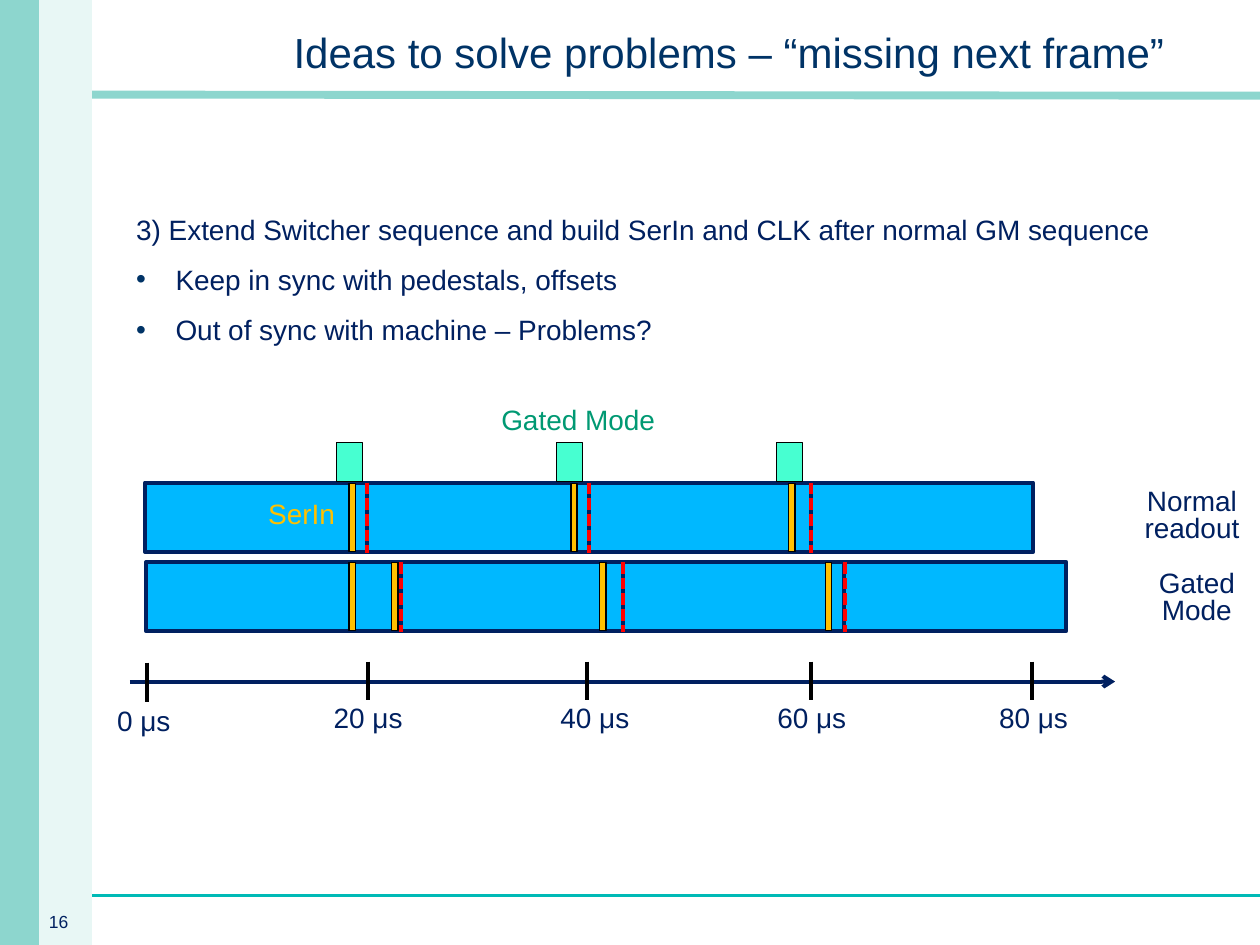
from lxml.etree import SubElement
from pptx import Presentation
from pptx.dml.color import RGBColor
from pptx.enum.dml import MSO_LINE_DASH_STYLE as Dash
from pptx.enum.shapes import MSO_CONNECTOR as Connector, MSO_SHAPE as Shape
from pptx.enum.text import MSO_ANCHOR as Anchor, MSO_AUTO_SIZE as AutoSize, PP_ALIGN as Align
from pptx.oxml.ns import qn
from pptx.util import Pt

NAVY = RGBColor(0x00, 0x20, 0x60)
TITLE_BLUE = RGBColor(0x00, 0x33, 0x66)
FRAME_BLUE = RGBColor(0x00, 0xB8, 0xFF)
TEAL = RGBColor(0x00, 0xBA, 0xB6)
SOFT_TEAL = RGBColor(0x8D, 0xD6, 0xCE)
PALE_TEAL = RGBColor(0xE8, 0xF7, 0xF5)
MINT = RGBColor(0x47, 0xFF, 0xD1)
GREEN = RGBColor(0x00, 0x99, 0x73)
AMBER = RGBColor(0xFF, 0xC0, 0x00)
RED = RGBColor(0xFF, 0x00, 0x00)
BLACK = RGBColor(0x00, 0x00, 0x00)

FRAME_HEIGHT = 39.6


def style_font(paragraph, size, color):
    for run in paragraph.runs:
        run.font.name = "Arial"
        run.font.size = Pt(size)
        run.font.color.rgb = color


def add_block(slide, left, top, width, height, fill, line=None, weight=0.75):
    block = slide.shapes.add_shape(Shape.RECTANGLE, Pt(left), Pt(top), Pt(width), Pt(height))
    block.shadow.inherit = False
    block.fill.solid()
    block.fill.fore_color.rgb = fill
    if line is None:
        block.line.fill.background()
    else:
        block.line.color.rgb = line
        block.line.width = Pt(weight)


def add_line(slide, x1, y1, x2, y2, color, weight=2.25):
    line = slide.shapes.add_connector(Connector.STRAIGHT, Pt(x1), Pt(y1), Pt(x2), Pt(y2))
    line.line.color.rgb = color
    line.line.width = Pt(weight)
    SubElement(line._element.spPr, qn("a:effectLst"))
    return line


def add_label(slide, text, left, top, width, height=23, size=16, color=NAVY, wrap=False):
    label = slide.shapes.add_textbox(Pt(left), Pt(top), Pt(width), Pt(height))
    frame = label.text_frame
    frame.text = text
    frame.word_wrap = wrap
    paragraph = frame.paragraphs[0]
    paragraph.line_spacing = 0.8
    paragraph.alignment = Align.CENTER if wrap else Align.LEFT
    style_font(paragraph, size, color)


def add_page_frame(slide, width, height):
    add_line(slide, 0, 54, width, 54.7, SOFT_TEAL, 4.5)
    add_line(slide, 52.6, 511.9, width, 511.9, TEAL, 1.5)
    add_block(slide, 21.6, 0, 31, height, PALE_TEAL)
    add_block(slide, 0, 0, 22.3, height, SOFT_TEAL)
    add_label(slide, "16", 20.9, 519.1, 34.6, 17.3, size=10)


def place(placeholder, left, top, width, height):
    placeholder.left, placeholder.top = Pt(left), Pt(top)
    placeholder.width, placeholder.height = Pt(width), Pt(height)
    placeholder.text_frame.auto_size = AutoSize.NONE


def fill_title(title, left, top, width, height):
    place(title, left, top, width, height)
    frame = title.text_frame
    frame.text = "Ideas to solve problems – “missing next frame”"
    frame.vertical_anchor = Anchor.MIDDLE
    heading = frame.paragraphs[0]
    heading.alignment = Align.CENTER
    heading.line_spacing = 1.1
    style_font(heading, 24, TITLE_BLUE)


def set_bullet(paragraph, bulleted):
    properties = paragraph._p.get_or_add_pPr()
    indent = Pt(22.5) if bulleted else 0
    properties.set("marL", str(indent))
    properties.set("indent", str(-indent))
    if bulleted:
        bullet_color = SubElement(properties, qn("a:buClr"))
        SubElement(bullet_color, qn("a:srgbClr"), val=str(TITLE_BLUE))
        SubElement(properties, qn("a:buFont"), typeface="Arial")
        SubElement(properties, qn("a:buChar"), char="•")
    else:
        SubElement(properties, qn("a:buNone"))


def fill_idea(body, left, top, width, height):
    place(body, left, top, width, height)
    frame = body.text_frame
    frame.text = "\n".join([
        "3) Extend Switcher sequence and build SerIn and CLK after normal GM sequence",
        "Keep in sync with pedestals, offsets",
        "Out of sync with machine – Problems?",
    ])
    for index, paragraph in enumerate(frame.paragraphs):
        set_bullet(paragraph, index > 0)
        paragraph.line_spacing = 1.5
        paragraph.space_before = Pt(0)
        style_font(paragraph, 16, NAVY)


def add_readout_row(slide, left, top, first_width, frame_width, serin_offsets):
    starts = [left] + [left + first_width + frame_width * i for i in range(3)]
    widths = [first_width] + [frame_width] * 3
    for start, width in zip(starts, widths):
        add_block(slide, start, top, width, FRAME_HEIGHT, FRAME_BLUE, NAVY, 2.25)
    for start in starts[1:]:
        boundary = add_line(slide, start, top, start, top + 40.3, RED)
        boundary.line.dash_style = Dash.SQUARE_DOT
    for offset in serin_offsets:
        add_block(slide, left + offset, top + 0.4, 3.6, 38.9, AMBER, BLACK)


def add_gates(slide, left, top, pitch):
    for i in range(3):
        add_block(slide, left + pitch * i, top, 15.1, 22.3, MINT, BLACK)
    add_label(slide, "Gated Mode", left + 87.2, top - 22.3, 103.7, color=GREEN)


def add_time_axis(slide, left, top, width):
    axis = add_line(slide, left, top, left + width, top, NAVY)
    SubElement(axis.line._get_or_add_ln(), qn("a:tailEnd"), type="arrow")
    ticks = [
        ("0 μs", 10, 45.4, -14.4, 0.7),
        ("20 μs", 136, 54.7, 109.4, 0),
        ("40 μs", 261.4, 54.7, 239, 0),
        ("60 μs", 389.5, 54.7, 362.9, 0),
        ("80 μs", 515.5, 54.7, 489.6, 0),
    ]
    for text, offset, label_width, label_offset, drop in ticks:
        x = left + offset
        add_line(slide, x, top - 11.5 + drop, x, top + 10.8 + drop, BLACK)
        add_label(slide, text, left + label_offset, top + 10.8 + 3 * drop, label_width)


def add_timing_diagram(slide, left, top):
    normal_top, gated_top = top + 23.1, top + 68.4
    add_readout_row(slide, left, normal_top, 126.9, 126.9, [116.6, 243.4, 367.9])
    add_readout_row(slide, left + 0.7, gated_top, 145.7, 126.7, [116, 140.4, 259.2, 388.1])
    add_gates(slide, left + 109.4, top, 125.7)
    add_label(slide, "SerIn", left + 63.4, normal_top + 7.9, 53.3, color=AMBER)
    add_label(slide, "Normal readout", left + 553, normal_top + 0.7, 90.7, 38.2, wrap=True)
    add_label(slide, "Gated Mode", left + 555.8, gated_top + 2.2, 90.7, 38.2, wrap=True)
    add_time_axis(slide, left - 8.6, top + 136.8, 563)


def main():
    deck = Presentation()
    deck.slide_width, deck.slide_height = Pt(720), Pt(540)
    slide = deck.slides.add_slide(deck.slide_layouts[1])
    title, body = slide.placeholders
    add_page_frame(slide, 720, 540)
    fill_title(title, 127.4, 9.4, 578.2, 37.4)
    fill_idea(body, 70.6, 108, 623.5, 94.3)
    add_timing_diagram(slide, 82.8, 252.7)
    deck.save("out.pptx")


if __name__ == "__main__":
    main()
